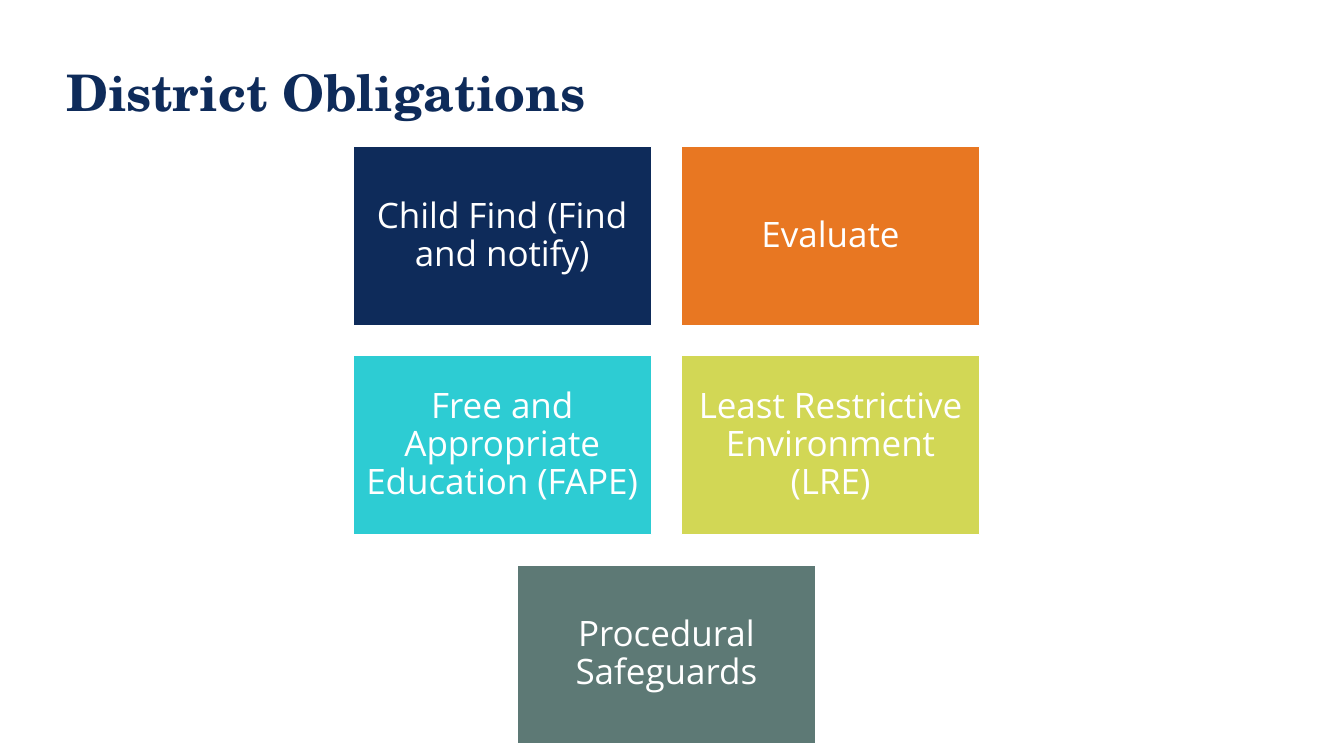
from pptx import Presentation
from pptx.dml.color import RGBColor
from pptx.enum.shapes import MSO_SHAPE
from pptx.enum.text import MSO_ANCHOR, PP_ALIGN
from pptx.util import Pt

NAVY = RGBColor(0x0E, 0x2B, 0x5A)
ORANGE = RGBColor(0xE8, 0x77, 0x22)
TURQUOISE = RGBColor(0x2D, 0xCC, 0xD3)
LIME = RGBColor(0xD2, 0xD7, 0x55)
SLATE = RGBColor(0x5D, 0x79, 0x75)
WHITE = RGBColor(0xFF, 0xFF, 0xFF)

OBLIGATION_ROWS = [
    [("Child Find (Find and notify)", NAVY), ("Evaluate", ORANGE)],
    [("Free and Appropriate Education (FAPE)", TURQUOISE),
     ("Least Restrictive Environment (LRE)", LIME)],
    [("Procedural Safeguards", SLATE)],
]
GRID_CENTER, GRID_TOP = 476, 104.5
CARD_WIDTH, CARD_HEIGHT = 213, 128
GAP = 21.5


def style_run(run, font_name, size, color, bold=False):
    run.font.name = font_name
    run.font.size = Pt(size)
    run.font.color.rgb = color
    run.font.bold = bold


def set_title(slide, text):
    title = slide.shapes.title
    title.left, title.top, title.width, title.height = Pt(40), Pt(18), Pt(872), Pt(95)
    title.text_frame.text = text
    title.text_frame.vertical_anchor = MSO_ANCHOR.MIDDLE
    paragraph = title.text_frame.paragraphs[0]
    paragraph.alignment = PP_ALIGN.LEFT
    style_run(paragraph.runs[0], "TeX Gyre Schola", 36, NAVY, bold=True)


def add_card(slide, left, top, text, color):
    card = slide.shapes.add_shape(
        MSO_SHAPE.RECTANGLE, Pt(left), Pt(top), Pt(CARD_WIDTH), Pt(CARD_HEIGHT))
    card.shadow.inherit = False
    card.fill.solid()
    card.fill.fore_color.rgb = color
    card.line.color.rgb = WHITE
    card.line.width = Pt(1)
    frame = card.text_frame
    frame.word_wrap = True
    frame.vertical_anchor = MSO_ANCHOR.MIDDLE
    frame.margin_left = frame.margin_right = Pt(7.2)
    frame.margin_top = frame.margin_bottom = Pt(7.2)
    frame.text = text
    paragraph = frame.paragraphs[0]
    paragraph.alignment = PP_ALIGN.CENTER
    paragraph.line_spacing = 0.9
    style_run(paragraph.runs[0], "Open Sans", 25, WHITE)


def add_card_rows(slide, rows):
    """Place equal cards in rows, each row centred on the grid."""
    for row_index, row in enumerate(rows):
        top = GRID_TOP + row_index * (CARD_HEIGHT + GAP)
        row_width = len(row) * (CARD_WIDTH + GAP) - GAP
        for column, (text, color) in enumerate(row):
            left = GRID_CENTER - row_width / 2 + column * (CARD_WIDTH + GAP)
            add_card(slide, left, top, text, color)


def main():
    presentation = Presentation()
    presentation.slide_width, presentation.slide_height = Pt(960), Pt(540)
    slide = presentation.slides.add_slide(presentation.slide_layouts[5])
    set_title(slide, "District Obligations")
    add_card_rows(slide, OBLIGATION_ROWS)
    presentation.save("out.pptx")


if __name__ == "__main__":
    main()
